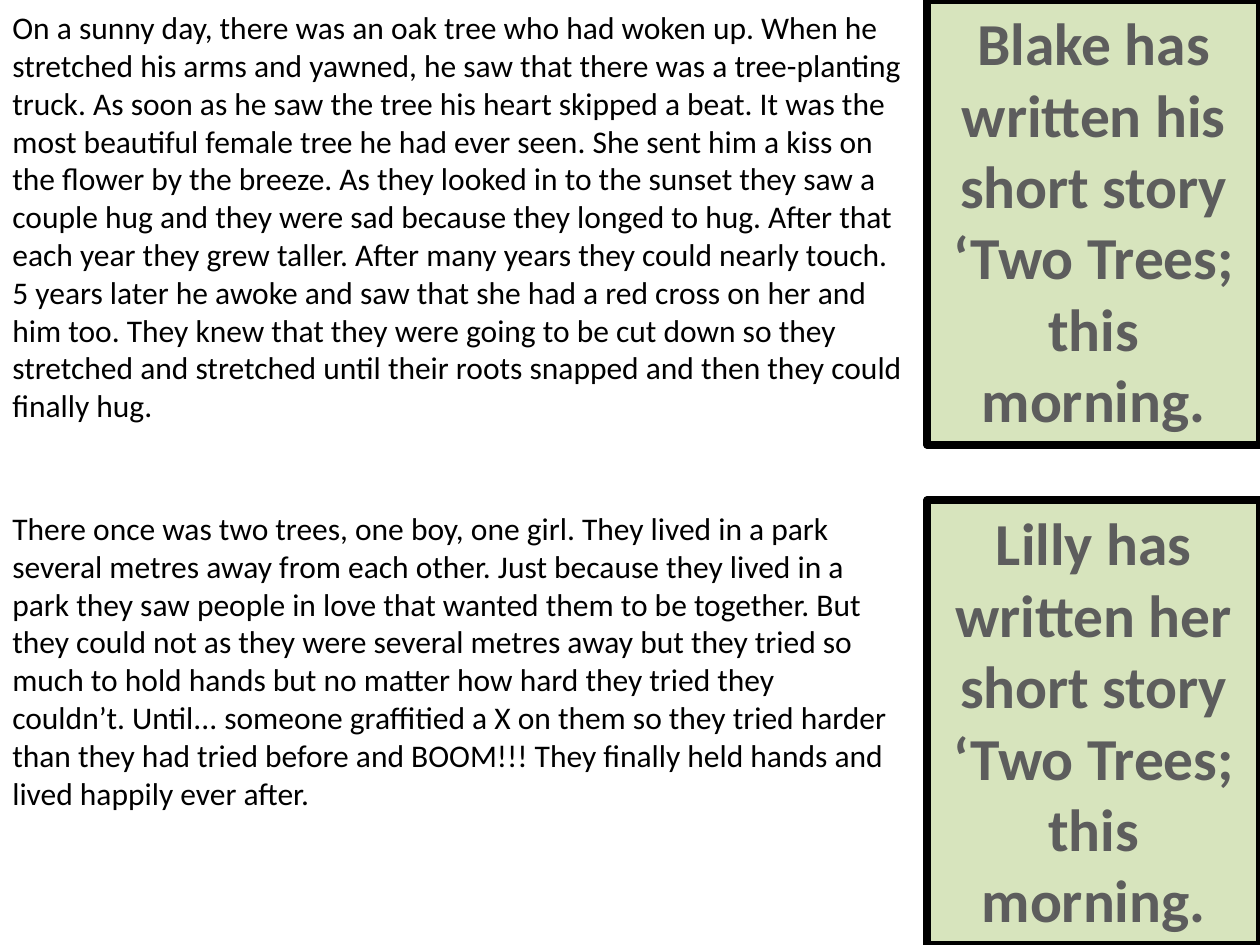
from pptx import Presentation
from pptx.dml.color import RGBColor
from pptx.enum.shapes import MSO_SHAPE as Shape
from pptx.enum.text import MSO_ANCHOR as Anchor, MSO_AUTO_SIZE as Fit, PP_ALIGN as Align
from pptx.util import Inches, Pt

BLACK = RGBColor(0x00, 0x00, 0x00)
GREY = RGBColor(0x5D, 0x5D, 0x5D)
GREEN = RGBColor(0xD7, 0xE4, 0xBD)

# Content: story, its box (top, width, height, anchor), and the label beside it
ROWS = [
    ("On a sunny day, there was an oak tree who had woken up. When he stretched "
     "his arms and yawned, he saw that there was a tree-planting truck. As soon as "
     "he saw the tree his heart skipped a beat. It was the most beautiful female "
     "tree he had ever seen. She sent him a kiss on the flower by the breeze. As "
     "they looked in to the sunset they saw a couple hug and they were sad because "
     "they longed to hug. After that each year they grew taller. After many years "
     "they could nearly touch. 5 years later he awoke and saw that she had a red "
     "cross on her and him too. They knew that they were going to be cut down so "
     "they stretched and stretched until their roots snapped and then they could "
     "finally hug.",
     (0, 7.28, 3.43, Anchor.MIDDLE),
     "Blake has written his short story ‘Two Trees; this morning."),
    ("There once was two trees, one boy, one girl. They lived in a park several "
     "metres away from each other. Just because they lived in a park they saw "
     "people in love that wanted them to be together. But they could not as they "
     "were several metres away but they tried so much to hold hands but no matter "
     "how hard they tried they couldn’t. Until... someone graffitied a X on them so "
     "they tried harder than they had tried before and BOOM!!! They finally held "
     "hands and lived happily ever after.",
     (3.99, 7.2, 2.52, Anchor.TOP),
     "Lilly has written her short story ‘Two Trees; this morning."),
]

WIDE, HIGH = 10, 7.5
CARD_W, CARD_H = 2.64, 3.53
STORY = {"size": Pt(18), "name": "Calibri", "bold": False}
LABEL = {"size": Pt(34), "name": "Calibri", "bold": True}


def write(shape, text, font, color, align, anchor):
    frame = shape.text_frame
    frame.word_wrap = True
    frame.auto_size = Fit.SHAPE_TO_FIT_TEXT
    frame.vertical_anchor = anchor
    para = frame.paragraphs[0]
    para.alignment = align
    run = para.add_run()
    run.text = text
    for key, val in font.items():
        setattr(run.font, key, val)
    run.font.color.rgb = color


deck = Presentation()
deck.slide_width, deck.slide_height = Inches(WIDE), Inches(HIGH)
slide = deck.slides.add_slide(deck.slide_layouts[6])

for i, (story, (top, width, height, anchor), label) in enumerate(ROWS):
    # Story on the left
    box = slide.shapes.add_textbox(0, Inches(top), Inches(width), Inches(height))
    write(box, story, STORY, BLACK, Align.LEFT, anchor)

    # Label card on the right: first at the slide's top, last at its foot
    y = i * (HIGH - CARD_H) / (len(ROWS) - 1)
    card = slide.shapes.add_shape(Shape.RECTANGLE, Inches(WIDE - CARD_W), Inches(y),
                                  Inches(CARD_W), Inches(CARD_H))
    card.shadow.inherit = False
    card.fill.solid()
    card.fill.fore_color.rgb = GREEN
    card.line.color.rgb = BLACK
    card.line.width = Pt(4.5)
    write(card, label, LABEL, GREY, Align.CENTER, Anchor.TOP)

deck.save("out.pptx")
